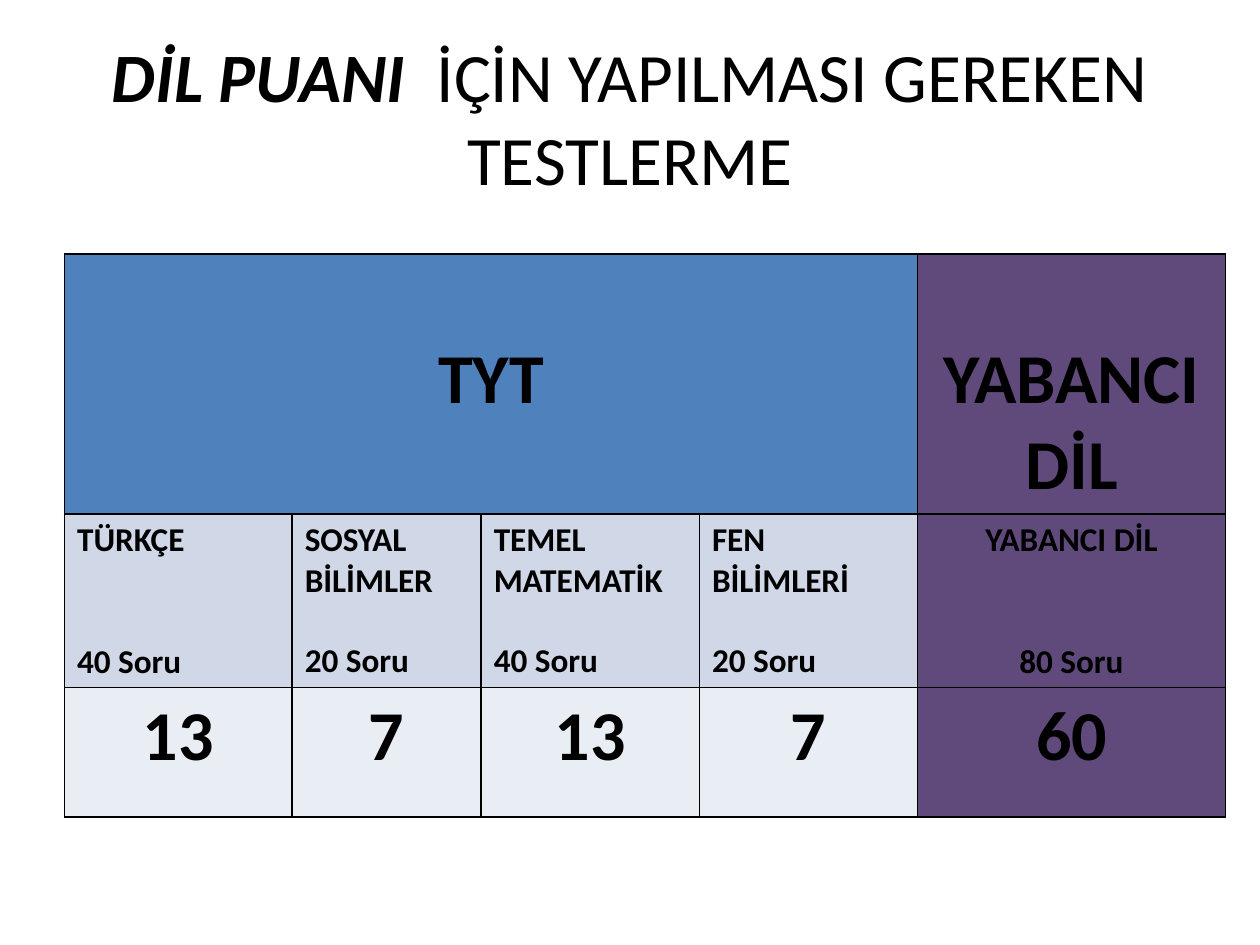
from dataclasses import dataclass

from lxml.etree import SubElement
from pptx import Presentation
from pptx.dml.color import RGBColor
from pptx.enum.text import MSO_ANCHOR, PP_ALIGN
from pptx.oxml.ns import qn
from pptx.util import Cm, Pt


@dataclass(frozen=True)
class Theme:
    font: str = "Calibri"
    ink: str = "000000"
    basic_test: str = "4F81BD"
    language: str = "604A7B"
    subject: str = "D0D8E8"
    target: str = "E9EDF4"
    title_size: float = 39.6
    large_size: float = 40
    subject_size: float = 19
    border_width: float = 1


class SlideBuilder:
    def __init__(self, slide, theme):
        self.slide = slide
        self.theme = theme

    def add_run(self, paragraph, text, size, bold=False, italic=False):
        run = paragraph.add_run()
        run.text = text
        font = run.font
        font.name = self.theme.font
        font.size = Pt(size)
        font.bold = bold
        font.italic = italic
        font.color.rgb = RGBColor.from_string(self.theme.ink)

    def add_title(self, left, top, width, height, emphasis, remainder):
        box = self.slide.shapes.add_textbox(Cm(left), Cm(top), Cm(width), Cm(height))
        frame = box.text_frame
        frame.word_wrap = True
        frame.vertical_anchor = MSO_ANCHOR.MIDDLE
        paragraph = frame.paragraphs[0]
        paragraph.alignment = PP_ALIGN.CENTER
        self.add_run(paragraph, emphasis, self.theme.title_size, bold=True, italic=True)
        self.add_run(paragraph, remainder, self.theme.title_size)

    def add_table(self, left, top, widths, heights):
        frame = self.slide.shapes.add_table(
            len(heights), len(widths), Cm(left), Cm(top), Cm(sum(widths)), Cm(sum(heights))
        )
        table = frame.table
        table.first_row = False
        table.horz_banding = False
        for column, width in zip(table.columns, widths):
            column.width = Cm(width)
        for row, height in zip(table.rows, heights):
            row.height = Cm(height)
        return table

    def style_cell(self, cell, color):
        properties = cell._tc.get_or_add_tcPr()
        for side in ("a:lnL", "a:lnR", "a:lnT", "a:lnB"):
            line = SubElement(properties, qn(side), w=str(Pt(self.theme.border_width)))
            SubElement(SubElement(line, qn("a:solidFill")), qn("a:srgbClr"), val=self.theme.ink)
        cell.fill.solid()
        cell.fill.fore_color.rgb = RGBColor.from_string(color)

    def write_cell(self, cell, lines, size, align=PP_ALIGN.CENTER, gap=0):
        """Write one paragraph per line, with gap points between them."""
        frame = cell.text_frame
        for index, text in enumerate(lines):
            paragraph = frame.paragraphs[0] if index == 0 else frame.add_paragraph()
            paragraph.alignment = align
            if index:
                paragraph.space_before = Pt(gap)
            self.add_run(paragraph, text, size, bold=True)


# Subject, question count, target, lines left free between subject and count
TESTS = [
    ("TÜRKÇE", "40 Soru", "13", 2),
    ("SOSYAL BİLİMLER", "20 Soru", "7", 1),
    ("TEMEL MATEMATİK", "40 Soru", "13", 1),
    ("FEN BİLİMLERİ", "20 Soru", "7", 1),
    ("YABANCI DİL", "80 Soru", "60", 2),
]
LANGUAGE_COLUMN = len(TESTS) - 1
LINE_HEIGHT = 1.22


def main():
    presentation = Presentation()
    presentation.slide_width = Cm(25.4)
    presentation.slide_height = Cm(19.05)
    theme = Theme()
    builder = SlideBuilder(presentation.slides.add_slide(presentation.slide_layouts[6]), theme)

    builder.add_title(1.27, 0.76, 22.86, 3.18, "DİL PUANI  ", "İÇİN YAPILMASI GEREKEN TESTLERME")

    table = builder.add_table(1.3, 5.12, [4.59, 3.81, 4.4, 4.4, 6.2], [5.24, 3.5, 2.61])
    row_colors = (theme.basic_test, theme.subject, theme.target)
    for row, color in enumerate(row_colors):
        for column in range(len(TESTS)):
            is_language = column == LANGUAGE_COLUMN
            builder.style_cell(table.cell(row, column), theme.language if is_language else color)

    table.cell(0, 0).merge(table.cell(0, LANGUAGE_COLUMN - 1))
    for column, heading in ((0, "TYT"), (LANGUAGE_COLUMN, "YABANCI DİL")):
        cell = table.cell(0, column)
        cell.margin_top = Cm(1.68)
        builder.write_cell(cell, [heading], theme.large_size)

    for column, (subject, questions, target, free_lines) in enumerate(TESTS):
        align = PP_ALIGN.CENTER if column == LANGUAGE_COLUMN else PP_ALIGN.LEFT
        gap = round(free_lines * theme.subject_size * LINE_HEIGHT, 1)
        builder.write_cell(table.cell(1, column), [subject, questions], theme.subject_size, align, gap)
        builder.write_cell(table.cell(2, column), [target], theme.large_size)

    presentation.save("out.pptx")


if __name__ == "__main__":
    main()
